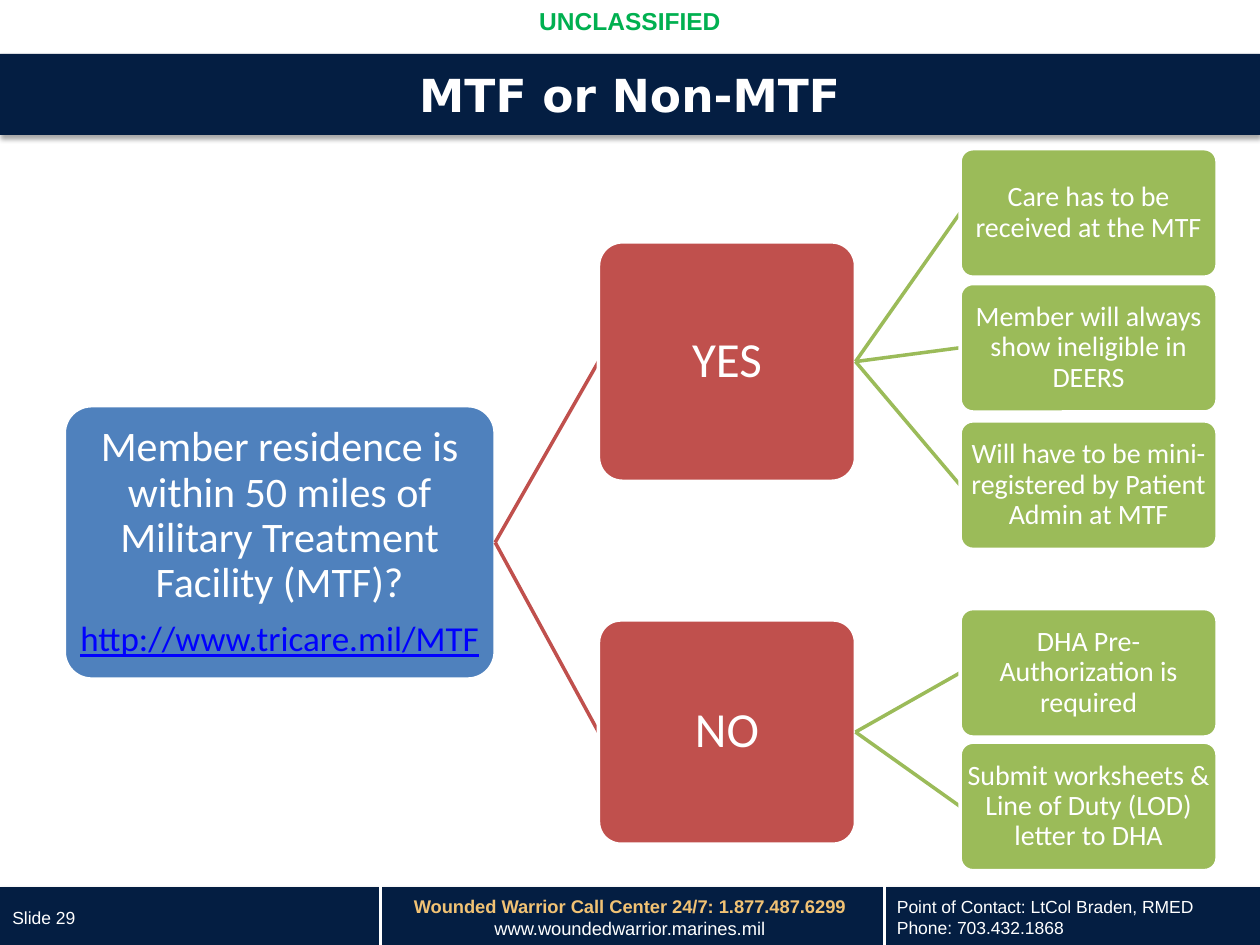
from collections import namedtuple

from lxml import etree
from pptx import Presentation
from pptx.dml.color import RGBColor
from pptx.enum.shapes import MSO_CONNECTOR, MSO_SHAPE
from pptx.enum.text import MSO_ANCHOR, PP_ALIGN
from pptx.oxml import parse_xml
from pptx.oxml.ns import nsdecls, qn
from pptx.util import Inches, Pt

STRAIGHT = MSO_CONNECTOR.STRAIGHT
RECTANGLE, ROUNDED = MSO_SHAPE.RECTANGLE, MSO_SHAPE.ROUNDED_RECTANGLE
TOP, MIDDLE = MSO_ANCHOR.TOP, MSO_ANCHOR.MIDDLE
LEFT, CENTER = PP_ALIGN.LEFT, PP_ALIGN.CENTER

NAVY = RGBColor(0x04, 0x1E, 0x42)
WHITE = RGBColor(0xFF, 0xFF, 0xFF)
GOLD = RGBColor(0xF1, 0xC2, 0x74)
MARKING_GREEN = RGBColor(0x00, 0xB0, 0x50)
LINK_BLUE = RGBColor(0x00, 0x00, 0xFF)
BLUE = RGBColor(0x4F, 0x81, 0xBD)
RED = RGBColor(0xC0, 0x50, 0x4D)
GREEN = RGBColor(0x9B, 0xBB, 0x59)

PAGE_WIDTH, PAGE_HEIGHT = 10, 7.5
LEFT_SIDE, RIGHT_SIDE = 1, 3

Box = namedtuple("Box", "left top width height")
Level = namedtuple("Level", "column columns size colour margin")
Node = namedtuple("Node", "row rows text children", defaults=((),))

TREE_COLUMNS, TREE_ROWS = 915, 573
LEVELS = (
    Level(0, 342, 24, BLUE, 0.02),
    Level(424, 204, 28, RED, 0.02),
    Level(711, 204, 16, GREEN, 0.01),
)
LEAF_ROWS = 102
LINK = "http://www.tricare.mil/MTF"
DECISION = Node(204, 217, "Member residence is within 50 miles of Military Treatment Facility (MTF)?", (
    Node(74, 190, "YES", (
        Node(0, LEAF_ROWS, "Care has to be received at the MTF"),
        Node(107, LEAF_ROWS, "Member will always show ineligible in DEERS"),
        Node(216, LEAF_ROWS, "Will have to be mini-registered by Patient Admin at MTF"),
    )),
    Node(374, 178, "NO", (
        Node(365, LEAF_ROWS, "DHA Pre-Authorization is required"),
        Node(471, LEAF_ROWS, "Submit worksheets & Line of Duty (LOD) letter to DHA"),
    )),
))


def inches(box):
    return [Inches(value) for value in box]


def part(box, left, top, width, height):
    return Box(box.left + left * box.width, box.top + top * box.height,
               width * box.width, height * box.height)


def write_line(frame, text, align=CENTER, **font_values):
    para = frame.paragraphs[0]
    if para.runs:
        para = frame.add_paragraph()
    para.alignment = align
    span = para.add_run()
    span.text = text
    colour = font_values.pop("colour", WHITE)
    for name, value in font_values.items():
        setattr(span.font, name, value)
    span.font.color.rgb = colour
    return para


def add_text(page, box, anchor):
    frame = page.shapes.add_textbox(*inches(box)).text_frame
    frame.word_wrap = True
    frame.vertical_anchor = anchor
    return frame


def add_bar(page, box):
    bar = page.shapes.add_shape(RECTANGLE, *inches(box))
    bar.fill.solid()
    bar.fill.fore_color.rgb = NAVY
    bar.line.fill.background()
    bar._element.spPr.append(parse_xml(
        f'<a:effectLst {nsdecls("a")}><a:outerShdw blurRad="39370" dist="22860" dir="5400000" '
        'rotWithShape="0"><a:srgbClr val="000000"><a:alpha val="35000"/></a:srgbClr>'
        '</a:outerShdw></a:effectLst>'))
    return bar


def add_line(page, start, end, colour):
    line = page.shapes.add_connector(STRAIGHT, *inches(start + end))
    line.line.color.rgb = colour
    line.line.width = Pt(2)
    etree.SubElement(line._element.spPr, qn("a:effectLst"))
    return line


def add_footer(page, box):
    add_bar(page, box)
    for share in (0.302, 0.702):
        column = box.left + share * box.width
        add_line(page, (column, box.top - 0.16), (column, box.top + box.height), WHITE)
    number = add_text(page, part(box, 0, 0.08, 0.23, 0.88), MIDDLE)
    write_line(number, "Slide 29", LEFT, name="Arial", size=Pt(10))
    centre = add_text(page, part(box, 0.314, 0.04, 0.372, 0.96), TOP)
    centre.word_wrap = False
    style = {"name": "Arial", "size": Pt(10.5)}
    write_line(centre, "Wounded Warrior Call Center 24/7: 1.877.487.6299", bold=True, colour=GOLD, **style)
    write_line(centre, "www.woundedwarrior.marines.mil", **style)
    contact = add_text(page, part(box, 0.702, 0.04, 0.298, 0.96), MIDDLE)
    for text in ("Point of Contact: LtCol Braden, RMED", "Phone: 703.432.1868"):
        write_line(contact, text, LEFT, name="Arial", size=Pt(10))


def add_header(page, box):
    marking = add_text(page, part(box, 0, 0, 1, 0.32), TOP)
    write_line(marking, "UNCLASSIFIED", name="Arial", size=Pt(14), bold=True, colour=MARKING_GREEN)
    bar = add_bar(page, part(box, 0, 0.4, 1, 0.6))
    bar.text_frame.vertical_anchor = MIDDLE
    write_line(bar.text_frame, "MTF or Non-MTF", name="DejaVu Sans", size=Pt(26), bold=True)


def add_node(page, tree, node, level):
    box = part(tree, level.column / TREE_COLUMNS, node.row / TREE_ROWS,
               level.columns / TREE_COLUMNS, node.rows / TREE_ROWS)
    card = page.shapes.add_shape(ROUNDED, *inches(box))
    card.adjustments[0] = 0.1
    card.shadow.inherit = False
    card.fill.solid()
    card.fill.fore_color.rgb = level.colour
    card.line.color.rgb = WHITE
    card.line.width = Pt(2)
    frame = card.text_frame
    frame.word_wrap = True
    frame.vertical_anchor = MIDDLE
    for side in ("left", "top", "right", "bottom"):
        setattr(frame, f"margin_{side}", Inches(level.margin))
    para = write_line(frame, node.text, name="Calibri", size=Pt(level.size))
    para.line_spacing = 0.9
    return card


def add_branch(page, tree, node, depth=0):
    card = add_node(page, tree, node, LEVELS[depth])
    for child in node.children:
        line = add_line(page, (0, 0), (1, 1), LEVELS[depth + 1].colour)
        child_card = add_branch(page, tree, child, depth + 1)
        line.begin_connect(card, RIGHT_SIDE)
        line.end_connect(child_card, LEFT_SIDE)
    return card


def add_decision_tree(page, box):
    question = add_branch(page, box, DECISION).text_frame
    question.paragraphs[0].space_after = Pt(8.4)
    link = write_line(question, LINK, name="Calibri", size=Pt(20), underline=True, colour=LINK_BLUE)
    link.line_spacing = 0.9


def main():
    deck = Presentation()
    deck.slide_width, deck.slide_height = Inches(PAGE_WIDTH), Inches(PAGE_HEIGHT)
    page = deck.slides.add_slide(deck.slide_layouts[6])
    add_footer(page, Box(0, 7.04, PAGE_WIDTH, 0.46))
    add_header(page, Box(0, 0, PAGE_WIDTH, 1.07))
    add_decision_tree(page, Box(0.51, 1.18, 9.15, 5.73))
    deck.save("out.pptx")


if __name__ == "__main__":
    main()
